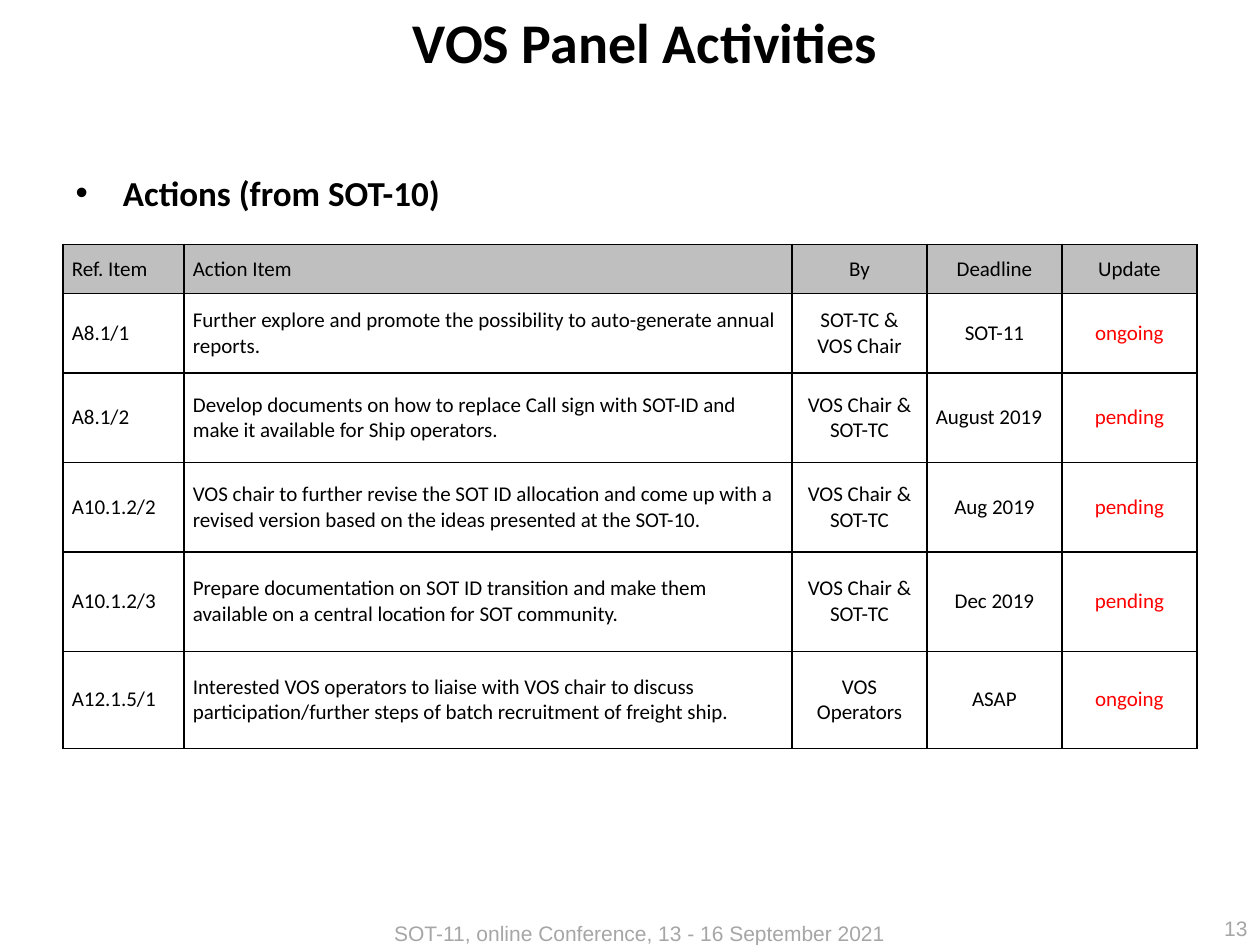
"""Build the VOS panel slide with its table of SOT-10 actions."""
from dataclasses import dataclass, astuple

from lxml import etree
from pptx import Presentation
from pptx import util as u
from pptx.dml import color
from pptx.enum import text
from pptx.oxml import ns

COLORS = {"black": "000000", "header": "BFBFBF", "status": "FF0000", "muted": "A6A6A6"}
SLIDE_WIDTH, SLIDE_HEIGHT = u.Inches(10), u.Inches(7.5)
LEFT, CENTER, RIGHT = text.PP_ALIGN.LEFT, text.PP_ALIGN.CENTER, text.PP_ALIGN.RIGHT
TOP, MIDDLE = text.MSO_ANCHOR.TOP, text.MSO_ANCHOR.MIDDLE


@dataclass(frozen=True)
class Box:
    """Position and size in percent of the slide."""
    left: float
    top: float
    width: float
    height: float

    def lengths(self) -> tuple:
        sides = (SLIDE_WIDTH, SLIDE_HEIGHT) * 2
        return tuple(u.Emu(round(side * share / 100)) for side, share in zip(sides, astuple(self)))


@dataclass(frozen=True)
class Style:
    """Look of a paragraph."""
    size: float
    color: str = "black"
    font: str = "Calibri"
    bold: bool = False
    align: text.PP_ALIGN = LEFT


@dataclass(frozen=True)
class Action:
    """One row of the action table."""
    reference: str
    item: str
    by: str
    deadline: str
    update: str
    height: float
    deadline_align: text.PP_ALIGN = CENTER


TITLE_BOX = Box(12.2, 0.13, 78, 13.07)
BODY_BOX = Box(5, 17.47, 90, 71.87)
TABLE_BOX = Box(5, 25.87, 90, 53.33)
FOOTER_BOX = Box(30.3, 96.8, 48.8, 4)
NUMBER_BOX = Box(77.5, 96.53, 22.5, 3.33)
COLUMN_SHARES = (0.96, 4.82, 1.07, 1.07, 1.07)

HEADER = Action("Ref. Item", "Action Item", "By", "Deadline", "Update", 0.39)
ACTIONS = (
    Action("A8.1/1", "Further explore and promote the possibility to auto-generate annual reports.",
           "SOT-TC & VOS Chair", "SOT-11", "ongoing", 0.63),
    Action("A8.1/2", "Develop documents on how to replace Call sign with SOT-ID and make it "
           "available for Ship operators.",
           "VOS Chair & SOT-TC", "August 2019", "pending", 0.71, LEFT),
    Action("A10.1.2/2", "VOS chair to further revise the SOT ID allocation and come up with a "
           "revised version based on the ideas presented at the SOT-10.",
           "VOS Chair & SOT-TC", "Aug 2019", "pending", 0.71),
    Action("A10.1.2/3", "Prepare documentation on SOT ID transition and make them available on a "
           "central location for SOT community.",
           "VOS Chair & SOT-TC", "Dec 2019", "pending", 0.79),
    Action("A12.1.5/1", "Interested VOS operators to liaise with VOS chair to discuss "
           "participation/further steps of batch recruitment of freight ship.",
           "VOS Operators", "ASAP", "ongoing", 0.77),
)


def write(frame, words: str, style: Style) -> None:
    """Fill a text frame with one formatted paragraph."""
    frame.text = words
    frame.word_wrap = True
    paragraph = frame.paragraphs[0]
    paragraph.alignment = style.align
    paragraph.space_before = u.Pt(0)
    font = paragraph.font
    font.name, font.size, font.bold = style.font, u.Pt(style.size), style.bold
    font.color.rgb = color.RGBColor.from_string(COLORS[style.color])


def place(shape, box: Box, words: str, style: Style, anchor=TOP) -> None:
    """Move a shape to its box and write its text."""
    shape.left, shape.top, shape.width, shape.height = box.lengths()
    write(shape.text_frame, words, style)
    shape.text_frame.auto_size = text.MSO_AUTO_SIZE.NONE
    shape.text_frame.vertical_anchor = anchor


def remove_bullet(paragraph) -> None:
    """Turn off the bullet and hanging indent of a paragraph."""
    properties = paragraph._p.get_or_add_pPr()
    properties.set("marL", "0")
    properties.set("indent", "0")
    etree.SubElement(properties, ns.qn("a:buNone"))


def add_borders(cell) -> None:
    """Draw a one-point line on each side of a cell."""
    properties = cell._tc.get_or_add_tcPr()
    for side in ("lnL", "lnR", "lnT", "lnB"):
        line = etree.SubElement(properties, ns.qn(f"a:{side}"), w=str(u.Pt(1)))
        fill = etree.SubElement(line, ns.qn("a:solidFill"))
        etree.SubElement(fill, ns.qn("a:srgbClr"), val=COLORS["black"])


def fill_row(row, action: Action, is_header: bool) -> None:
    """Write and format the cells of one table row."""
    words = (action.reference, action.item, action.by, action.deadline, action.update)
    aligns = (LEFT, LEFT, CENTER, action.deadline_align, CENTER)
    status = "black" if is_header else "status"
    colors = ("black",) * 4 + (status,)
    for cell, label, align, tone in zip(row.cells, words, aligns, colors):
        write(cell.text_frame, label, Style(12, tone, align=align))
        cell.vertical_anchor = MIDDLE
        cell.margin_left = cell.margin_right = u.Inches(0.07)
        cell.margin_top = cell.margin_bottom = 0
        add_borders(cell)
        if is_header:
            cell.fill.solid()
            cell.fill.fore_color.rgb = color.RGBColor.from_string(COLORS["header"])
        else:
            cell.fill.background()


def add_action_table(slide) -> None:
    """Add the action table with its proportional columns and rows."""
    entries = (HEADER, *ACTIONS)
    left, top, width, height = TABLE_BOX.lengths()
    table = slide.shapes.add_table(len(entries), len(COLUMN_SHARES), left, top, width, height).table
    table.first_row = table.horz_banding = False
    for column, share in zip(table.columns, COLUMN_SHARES):
        column.width = round(width * share / sum(COLUMN_SHARES))
    total = sum(entry.height for entry in entries)
    for row, entry in zip(table.rows, entries):
        row.height = round(height * entry.height / total)
        fill_row(row, entry, entry is HEADER)


def main() -> None:
    """Build and save the slide."""
    presentation = Presentation()
    presentation.slide_width, presentation.slide_height = SLIDE_WIDTH, SLIDE_HEIGHT
    slide = presentation.slides.add_slide(presentation.slide_layouts[1])
    title, body = slide.placeholders
    place(title, TITLE_BOX, "VOS Panel Activities", Style(32, bold=True, align=CENTER))
    remove_bullet(body.text_frame.paragraphs[0])
    place(body, BODY_BOX, "Actions (from SOT-10)", Style(20, bold=True))
    add_action_table(slide)
    labels = (
        (FOOTER_BOX, "SOT-11, online Conference, 13 - 16 September 2021", LEFT, TOP),
        (NUMBER_BOX, "13", RIGHT, MIDDLE),
    )
    for box, words, align, anchor in labels:
        label = slide.shapes.add_textbox(*box.lengths())
        place(label, box, words, Style(12, "muted", "Arial", align=align), anchor)
    presentation.save("out.pptx")


if __name__ == "__main__":
    main()
